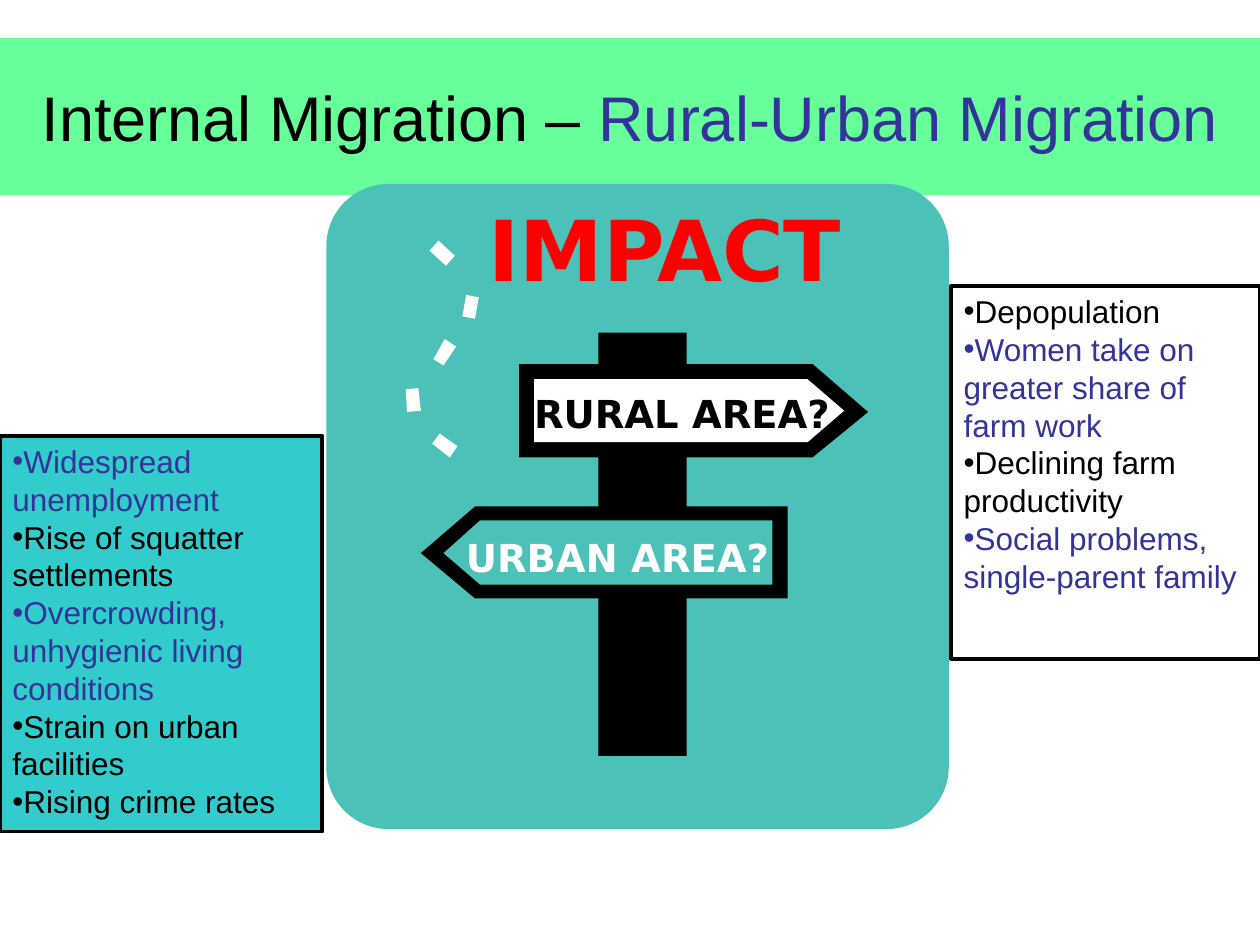
from lxml.etree import SubElement
from pptx import Presentation
from pptx.dml.color import RGBColor
from pptx.enum.shapes import MSO_SHAPE
from pptx.enum.text import MSO_ANCHOR, PP_ALIGN
from pptx.oxml.ns import qn
from pptx.util import Inches, Pt

COLS, ROWS = 100, 75
WIDE, HIGH = Inches(10), Inches(7.5)
HUES = {
    "black": "000000",
    "white": "FFFFFF",
    "green": "66FF99",
    "teal": "4CC1B7",
    "aqua": "33CCCC",
    "blue": "333399",
    "red": "FF0000",
}
DASHES = [
    [(34.1, 19.9), (34.8, 19.1), (36.1, 20.3), (35.4, 21.1)],
    [(37, 23.4), (38, 23.6), (37.7, 25.3), (36.7, 25.1)],
    [(35.3, 26.9), (36.2, 27.5), (35.2, 29), (34.4, 28.5)],
    [(33.4, 32.6), (32.3, 32.7), (32.2, 30.9), (33.2, 30.8)],
    [(34.3, 35.2), (34.9, 34.4), (36.3, 35.4), (35.7, 36.3)],
]
SIGNS = [
    ([(41.2, 28.9), (64.5, 28.9), (68.9, 32.7), (64.5, 36.3), (41.2, 36.3)], "black"),
    ([(42.4, 30.1), (64.1, 30.1), (67, 32.6), (64.1, 35.1), (42.4, 35.1)], "white"),
    ([(62.5, 40.2), (37.7, 40.2), (33.4, 43.9), (37.7, 47.5), (62.5, 47.5)], "black"),
    ([(61.3, 41.3), (38.1, 41.3), (35.2, 43.9), (38.1, 46.4), (61.3, 46.4)], "teal"),
]
RURAL = [
    ("Depopulation", "black"),
    ("Women take on greater share of farm work", "blue"),
    ("Declining farm productivity", "black"),
    ("Social problems, single-parent family", "blue"),
]
URBAN = [
    ("Widespread unemployment", "blue"),
    ("Rise of squatter settlements", "black"),
    ("Overcrowding, unhygienic living conditions", "blue"),
    ("Strain on urban facilities", "black"),
    ("Rising crime rates", "black"),
]


def col(n):
    return round(WIDE * n / COLS)


def row(n):
    return round(HIGH * n / ROWS)


def place(box):
    x, y, w, h = box
    return col(x), row(y), col(w), row(h)


def tint(hue):
    return RGBColor.from_string(HUES[hue])


def paint(shape, fill, line=None):
    shape.shadow.inherit = False
    if fill:
        shape.fill.solid()
        shape.fill.fore_color.rgb = tint(fill)
    else:
        shape.fill.background()
    if line:
        shape.line.color.rgb = tint(line)
        shape.line.width = Pt(2.25)
    else:
        shape.line.fill.background()
    return shape


def block(shapes, box, fill, line=None, kind=MSO_SHAPE.RECTANGLE):
    return paint(shapes.add_shape(kind, *place(box)), fill, line)


def outline(shapes, dots, fill):
    spots = [(col(x), row(y)) for x, y in dots]
    pen = shapes.build_freeform(*spots[0])
    pen.add_line_segments(spots[1:], close=True)
    return paint(pen.convert_to_shape(), fill)


def write(para, text, size=18, hue="black", font="Arial", bold=False, align=PP_ALIGN.LEFT):
    para.alignment = align
    run = para.add_run()
    run.text = text
    run.font.size = Pt(size)
    run.font.name = font
    run.font.bold = bold
    run.font.color.rgb = tint(hue)


def dot(para, hue):
    props = para._p.get_or_add_pPr()
    shade = SubElement(props, qn("a:buClr"))
    SubElement(shade, qn("a:srgbClr")).set("val", HUES[hue])
    SubElement(props, qn("a:buFont")).set("typeface", "Arial")
    SubElement(props, qn("a:buChar")).set("char", "•")


def label(shapes, box, text, size, hue):
    frame = shapes.add_textbox(*place(box)).text_frame
    frame.word_wrap = False
    write(frame.paragraphs[0], text, size=size, hue=hue, font="DejaVu Sans", bold=True)


def panel(shapes, box, items, fill=None):
    frame = block(shapes, box, fill, line="black").text_frame
    frame.word_wrap = True
    frame.vertical_anchor = MSO_ANCHOR.TOP
    for i, (text, hue) in enumerate(items):
        para = frame.add_paragraph() if i else frame.paragraphs[0]
        para.line_spacing = Pt(21.6)
        write(para, text, hue=hue)
        dot(para, hue)


def banner(shapes):
    frame = block(shapes, (0, 3, 100, 12.5), "green").text_frame
    frame.word_wrap = True
    frame.vertical_anchor = MSO_ANCHOR.MIDDLE
    para = frame.paragraphs[0]
    for text, hue in (("Internal Migration – ", "black"), ("Rural-Urban Migration", "blue")):
        write(para, text, size=36, hue=hue, align=PP_ALIGN.CENTER)


def post(shapes):
    parts = shapes.add_group_shape().shapes
    back = block(parts, (25.9, 14.6, 49.4, 51.2), "teal", kind=MSO_SHAPE.ROUNDED_RECTANGLE)
    back.adjustments[0] = 0.1
    block(parts, (47.5, 26.4, 7, 33.6), "black")
    for dots, fill in SIGNS:
        outline(parts, dots, fill)
    for dots in DASHES:
        outline(parts, dots, "white")


def main():
    deck = Presentation()
    deck.slide_width, deck.slide_height = WIDE, HIGH
    shapes = deck.slides.add_slide(deck.slide_layouts[6]).shapes
    banner(shapes)
    post(shapes)
    label(shapes, (37.8, 15.2, 31.4, 9), "IMPACT", 48, "red")
    label(shapes, (41.4, 30.5, 25.8, 4.7), "RURAL AREA?", 22, "black")
    label(shapes, (36, 41.9, 26.4, 4.7), "URBAN AREA?", 22, "white")
    panel(shapes, (75.5, 22.7, 24.5, 29.6), RURAL)
    panel(shapes, (0, 34.6, 25.6, 31.4), URBAN, fill="aqua")
    deck.save("out.pptx")


if __name__ == "__main__":
    main()
